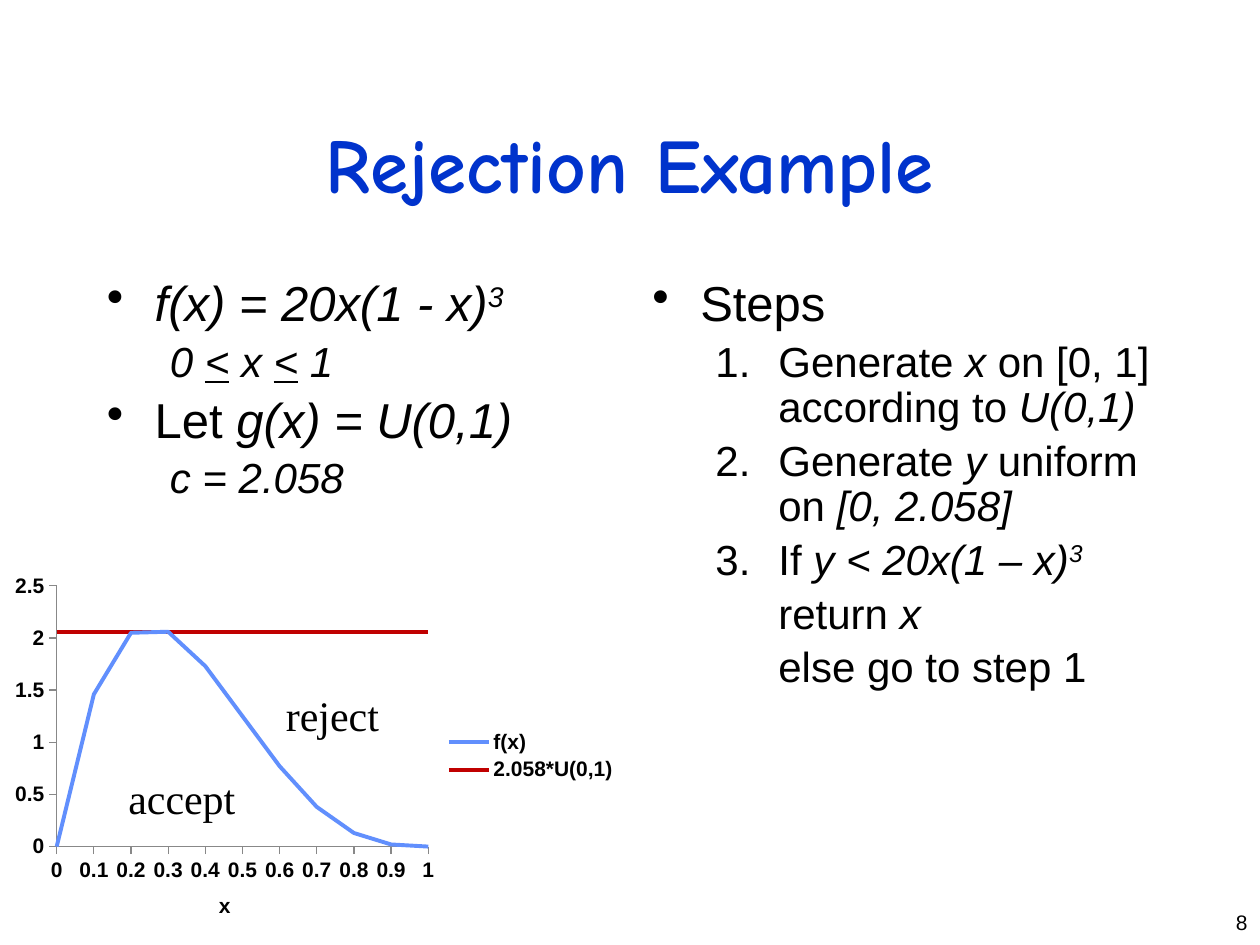
from lxml import etree
from pptx import Presentation
from pptx.chart.data import XyChartData
from pptx.dml.color import RGBColor
from pptx.enum.chart import XL_CHART_TYPE as Kind, XL_LEGEND_POSITION as Side
from pptx.enum.chart import XL_TICK_MARK as Tick
from pptx.enum.text import MSO_ANCHOR as Anchor, PP_ALIGN as Align
from pptx.oxml import parse_xml
from pptx.oxml.ns import nsdecls, qn
from pptx.util import Inches, Pt

COLORS = {"title": "0033CC", "text": "000000", "curve": "618FFD",
          "bound": "C00000", "axis": "888888"}
BULLET = ("buChar", {"char": "•"})
NUMBER = ("buAutoNum", {"type": "arabicPeriod"})


def rgb(name):
    return RGBColor.from_string(COLORS[name])


def write(para, *runs, size=24, font="Arial", color="text", bold=False,
          align=None):
    """Add runs, each a (text, marks) pair: i italic, u underline, s superscript."""
    para.alignment = align
    for text, marks in runs:
        run = para.add_run()
        run.text = text
        face = run.font
        face.size, face.name, face.bold = Pt(size), font, bold
        face.color.rgb = rgb(color)
        face.italic = "i" in marks
        face.underline = "u" in marks
        if "s" in marks:
            run._r.get_or_add_rPr().set("baseline", "30000")


def add_box(slide, box, wrap=True):
    frame = slide.shapes.add_textbox(*map(Inches, box)).text_frame
    frame.word_wrap = wrap
    return frame


def add_title(slide, box, text):
    shape = slide.shapes.title
    shape.left, shape.top, shape.width, shape.height = map(Inches, box)
    shape.text_frame.vertical_anchor = Anchor.MIDDLE
    write(shape.text_frame.paragraphs[0], (text, ""), size=44,
          font="Comic Neue", color="title", bold=True, align=Align.CENTER)


def add_list(slide, box, items):
    """Each item is (size, left margin, first indent, bullet, runs)."""
    frame = add_box(slide, box)
    for n, (size, left, first, mark, runs) in enumerate(items):
        para = frame.add_paragraph() if n else frame.paragraphs[0]
        para.line_spacing = 0.9
        para.space_before = Pt(size * 0.2)
        props = para._p.get_or_add_pPr()
        props.set("marL", str(Inches(left)))
        props.set("indent", str(Inches(first)))
        if mark:
            tag, attrs = mark
            etree.SubElement(props, qn("a:" + tag), attrs)
        write(para, *runs, size=size)


def add_label(slide, box, text):
    frame = add_box(slide, box, wrap=False)
    write(frame.paragraphs[0], (text, ""), font="Times New Roman")


def style_axis(axis, top, step):
    axis.minimum_scale, axis.maximum_scale = 0, top
    axis.major_unit = step
    axis.has_major_gridlines = False
    axis.major_tick_mark = Tick.OUTSIDE
    axis.minor_tick_mark = Tick.NONE
    axis.tick_labels.number_format = "General"
    axis.tick_labels.number_format_is_linked = False
    axis.format.line.color.rgb = rgb("axis")
    axis.format.line.width = Pt(0.75)


def set_plot(chart, x, y, w, h):
    """Place the inner plot area, in fractions of the chart."""
    parts = {"layoutTarget": "inner", "xMode": "edge", "yMode": "edge",
             "x": x, "y": y, "w": w, "h": h}
    body = "".join(f'<c:{k} val="{v}"/>' for k, v in parts.items())
    layout = parse_xml(f'<c:layout {nsdecls("c")}><c:manualLayout>{body}'
                       '</c:manualLayout></c:layout>')
    area = chart._chartSpace.chart.plotArea
    for old in area.findall(qn("c:layout")):
        area.remove(old)
    area.insert(0, layout)


def add_plot(slide, box):
    data = XyChartData()
    curve = data.add_series("f(x)")
    bound = data.add_series("2.058*U(0,1)")
    for n in range(11):
        x = n / 10
        curve.add_data_point(x, round(20 * x * (1 - x) ** 3, 2))
        bound.add_data_point(x, 2.06)
    chart = slide.shapes.add_chart(Kind.XY_SCATTER_LINES_NO_MARKERS,
                                   *map(Inches, box), data).chart
    chart.has_title = False
    chart.font.size, chart.font.name, chart.font.bold = Pt(12), "Arial", True
    chart.font.color.rgb = rgb("text")
    chart.plots[0].vary_by_categories = False
    for line, color in zip(chart.plots[0].series, ("curve", "bound")):
        line.smooth = False
        line.format.line.color.rgb = rgb(color)
        line.format.line.width = Pt(2.25)
    style_axis(chart.category_axis, 1, 0.1)
    style_axis(chart.value_axis, 2.5, 0.5)
    write(chart.category_axis.axis_title.text_frame.paragraphs[0],
          ("x", ""), size=12, bold=True)
    chart.has_legend = True
    chart.legend.position = Side.RIGHT
    chart.legend.include_in_layout = False
    set_plot(chart, 0.09, 0.05, 0.59, 0.69)


def head(*runs):
    return 28, 0.38, -0.38, BULLET, runs


def note(*runs):
    return 24, 0.81, -0.31, None, runs


def step(*runs):
    return 24, 1, -0.5, NUMBER, runs


def more(*runs):
    return 24, 1, 0, None, runs


def main():
    deck = Presentation()
    deck.slide_width, deck.slide_height = Inches(10), Inches(7.5)
    slide = deck.slides.add_slide(deck.slide_layouts[5])
    add_title(slide, (0.75, 0.67, 8.5, 1.25), "Rejection Example")
    add_list(slide, (0.75, 2.17, 4.17, 4.5), [
        head(("f(x) = 20x(1 - x)", "i"), ("3", "is")),
        note(("0 ", "i"), ("<", "iu"), (" x ", "i"), ("<", "iu"), (" 1", "i")),
        head(("Let ", ""), ("g(x) = U(0,1)", "i")),
        note(("c = 2.058", "i")),
    ])
    add_list(slide, (5.08, 2.17, 4.17, 4.5), [
        head(("Steps", "")),
        step(("Generate ", ""), ("x", "i"), (" on [0, 1] according to ", ""),
             ("U(0,1)", "i")),
        step(("Generate ", ""), ("y", "i"), (" uniform on ", ""),
             ("[0, 2.058]", "i")),
        step(("If ", ""), ("y < 20x(1 – x)", "i"), ("3", "is")),
        more(("return ", ""), ("x", "i")),
        more(("else go to step 1", "")),
    ])
    page = add_box(slide, (9.25, 7.17, 0.75, 0.33))
    write(page.paragraphs[0], ("8", ""), size=12, align=Align.RIGHT)
    add_label(slide, (0.92, 6.08, 1.06, 0.5), "accept")
    add_label(slide, (2.17, 5.42, 0.95, 0.5), "reject")
    add_plot(slide, (0, 4.5, 5, 3))
    deck.save("out.pptx")


if __name__ == "__main__":
    main()
